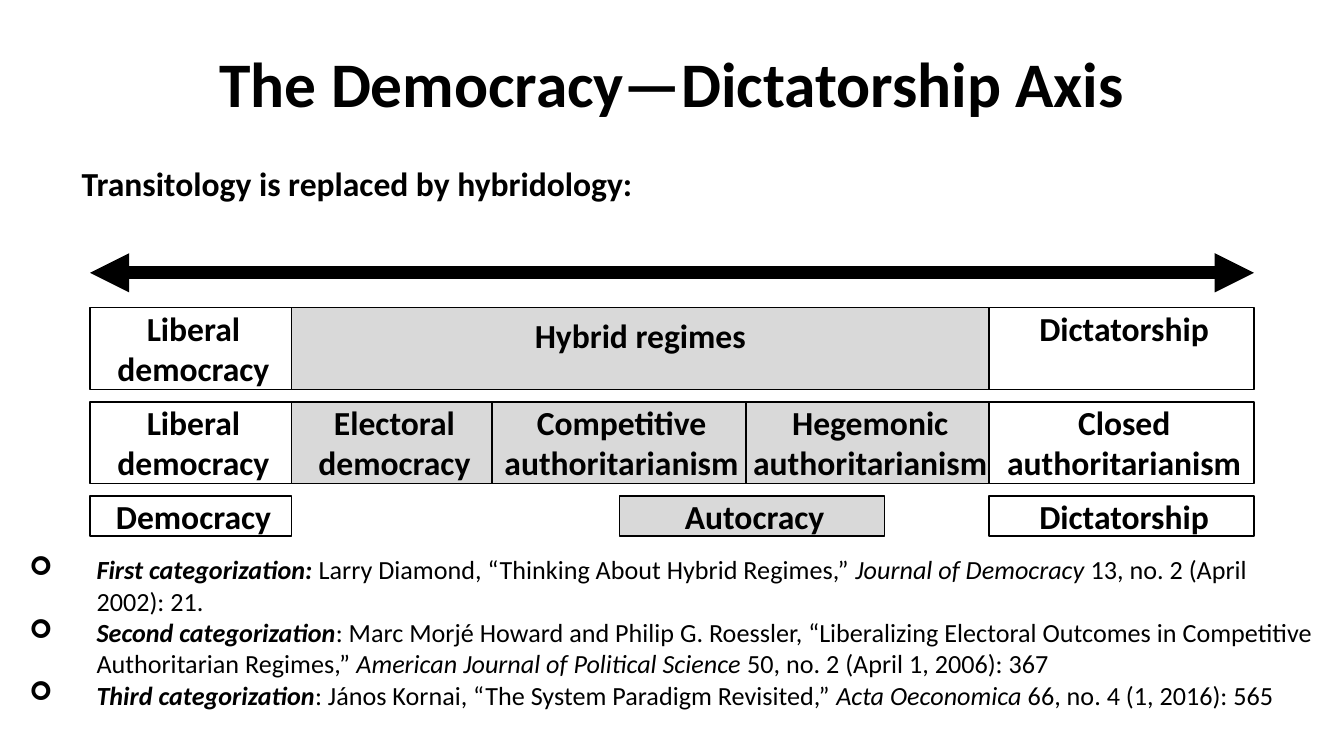
from lxml import etree
from pptx import Presentation
from pptx.dml.color import RGBColor
from pptx.enum.shapes import MSO_CONNECTOR, MSO_SHAPE
from pptx.enum.text import MSO_ANCHOR, PP_ALIGN
from pptx.oxml.ns import qn
from pptx.util import Inches, Pt

FONT = "Calibri"
BLACK, GRAY = "000000", "D9D9D9"
EDGES = [0.67, 2.17, 3.66, 5.55, 7.36, 9.33]
ROW_1, ROW_2, ROW_3 = 2.29, 2.99, 3.69
TALL, LOW = 0.61, 0.3

REFERENCES = [
    ("First categorization: ", "Larry Diamond, “Thinking About Hybrid Regimes,” ",
     "Journal of Democracy", " 13, no. 2 (April 2002): 21."),
    ("Second categorization",
     ": Marc Morjé Howard and Philip G. Roessler, “Liberalizing Electoral "
     "Outcomes in Competitive Authoritarian Regimes,” ",
     "American Journal of Political Science", " 50, no. 2 (April 1, 2006): 367"),
    ("Third categorization", ": János Kornai, “The System Paradigm Revisited,” ",
     "Acta Oeconomica", " 66, no. 4 (1, 2016): 565"),
]


def color(value):
    return RGBColor.from_string(value)


def add_run(p, text, size, bold=False, italic=False):
    r = p.add_run()
    r.text = text
    r.font.name = FONT
    r.font.size = Pt(size)
    r.font.bold = bold
    r.font.italic = italic
    r.font.color.rgb = color(BLACK)


def add_text_box(s, left, top, width, height):
    tf = s.shapes.add_textbox(Inches(left), Inches(top),
                              Inches(width), Inches(height)).text_frame
    tf.word_wrap = True
    return tf


def add_regime(s, text, left, right, top, height, fill=None, tight=True):
    """Add a box between two x positions; tight drops most of its margins."""
    sp = s.shapes.add_shape(MSO_SHAPE.RECTANGLE, Inches(left), Inches(top),
                            Inches(right - left), Inches(height))
    sp.shadow.inherit = False
    if fill:
        sp.fill.solid()
        sp.fill.fore_color.rgb = color(fill)
    else:
        sp.fill.background()
    sp.line.color.rgb = color(BLACK)
    sp.line.width = Pt(0.75)
    tf = sp.text_frame
    tf.word_wrap = True
    tf.vertical_anchor = MSO_ANCHOR.TOP
    if tight:
        tf.margin_left = Inches(0.04)
        tf.margin_top = tf.margin_right = tf.margin_bottom = 0
    p = tf.paragraphs[0]
    p.alignment = PP_ALIGN.CENTER
    add_run(p, text, 18, bold=True)


def add_axis(s, left, right, y):
    line = s.shapes.add_connector(MSO_CONNECTOR.STRAIGHT, Inches(left), Inches(y),
                                  Inches(right), Inches(y))
    line.line.color.rgb = color(BLACK)
    line.line.width = Pt(7)
    ln = line.line._get_or_add_ln()
    for end in ("a:headEnd", "a:tailEnd"):
        etree.SubElement(ln, qn(end), type="triangle")
    etree.SubElement(line._element.spPr, qn("a:effectLst"))


def set_bullet(p, char, indent):
    pPr = p._p.get_or_add_pPr()
    pPr.set("marL", str(Inches(indent)))
    pPr.set("indent", str(-Inches(indent)))
    etree.SubElement(pPr, qn("a:buFont"), typeface="Wingdings", charset="2")
    etree.SubElement(pPr, qn("a:buChar"), char=char)


def add_references(s):
    tf = add_text_box(s, 0.12, 4.07, 9.76, 1.28)
    for i, (label, work, journal, issue) in enumerate(REFERENCES):
        p = tf.add_paragraph() if i else tf.paragraphs[0]
        set_bullet(p, "➢", 0.5)
        add_run(p, label, 14, bold=True, italic=True)
        add_run(p, work, 14)
        add_run(p, journal, 14, italic=True)
        add_run(p, issue, 14)


def add_categorizations(s):
    first, last = EDGES[:2], EDGES[-2:]
    add_regime(s, "Liberal democracy", *first, ROW_1, TALL)
    add_regime(s, "Hybrid regimes", EDGES[1], EDGES[-2], ROW_1, TALL, GRAY, tight=False)
    add_regime(s, "Dictatorship", *last, ROW_1, TALL)

    names = ["Liberal democracy", "Electoral democracy", "Competitive authoritarianism",
             "Hegemonic authoritarianism", "Closed authoritarianism"]
    for i, name in enumerate(names):
        fill = GRAY if 0 < i < len(names) - 1 else None
        add_regime(s, name, EDGES[i], EDGES[i + 1], ROW_2, TALL, fill)

    add_regime(s, "Democracy", *first, ROW_3, LOW)
    add_regime(s, "Autocracy", 4.61, 6.58, ROW_3, LOW, GRAY)
    add_regime(s, "Dictatorship", *last, ROW_3, LOW)


def main():
    prs = Presentation()
    prs.slide_width = Inches(10)
    prs.slide_height = prs.slide_width * 9 // 16
    s = prs.slides.add_slide(prs.slide_layouts[6])

    title = add_text_box(s, 0.51, 0.14, 8.98, 0.94)
    title.vertical_anchor = MSO_ANCHOR.MIDDLE
    title.paragraphs[0].alignment = PP_ALIGN.CENTER
    add_run(title.paragraphs[0], "The Democracy—Dictatorship Axis", 34, bold=True)

    subtitle = add_text_box(s, 0.51, 1.16, 7.87, 0.4)
    add_run(subtitle.paragraphs[0], "Transitology is replaced by hybridology:", 18, bold=True)

    add_axis(s, EDGES[0], EDGES[-1], 2.03)
    add_categorizations(s)
    add_references(s)
    prs.save("out.pptx")


if __name__ == "__main__":
    main()
